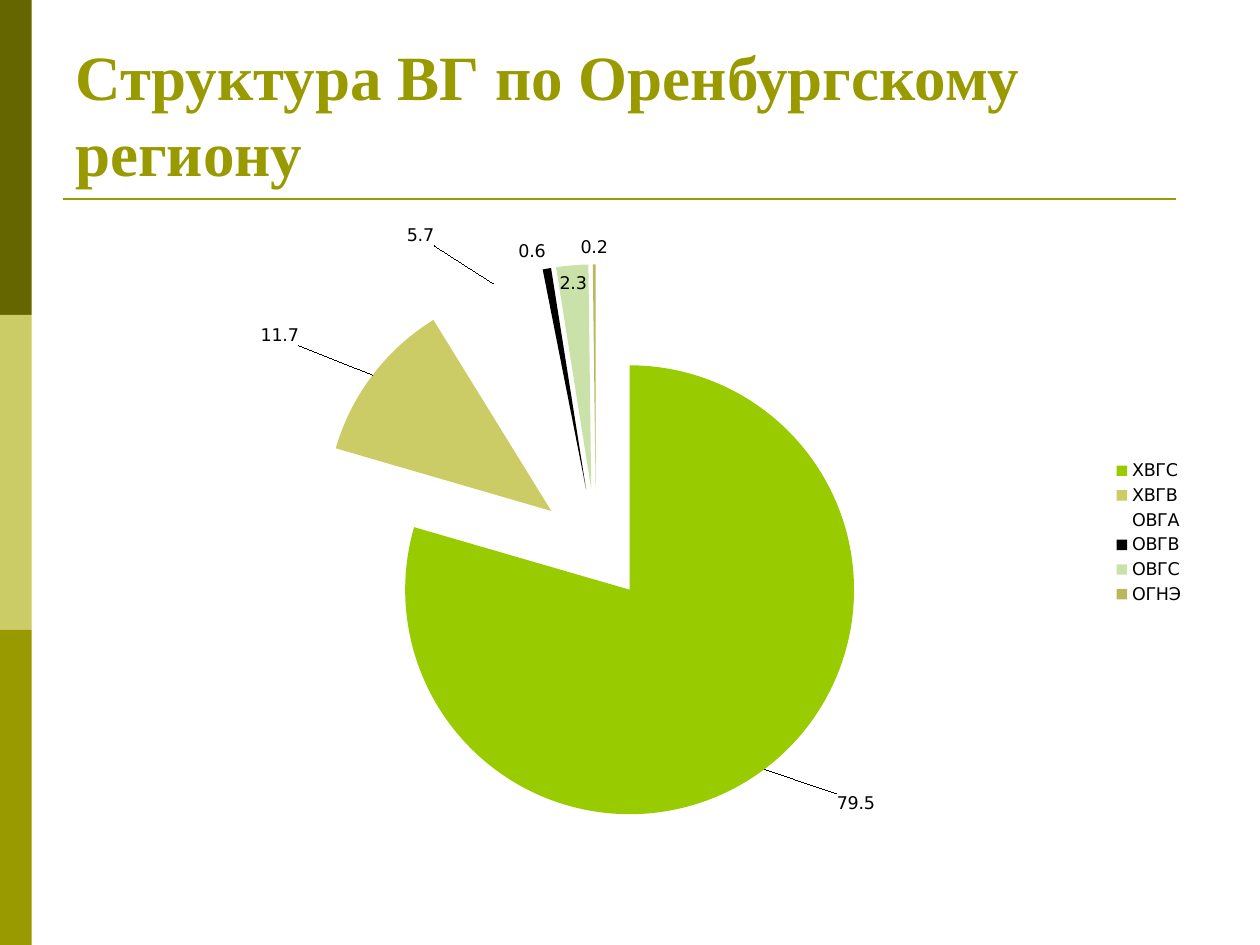
from lxml import etree
from pptx import Presentation
from pptx.chart.data import CategoryChartData
from pptx.dml.color import RGBColor
from pptx.enum.chart import XL_CHART_TYPE, XL_LABEL_POSITION, XL_LEGEND_POSITION
from pptx.enum.shapes import MSO_CONNECTOR, MSO_SHAPE
from pptx.enum.text import MSO_ANCHOR
from pptx.oxml import parse_xml
from pptx.oxml.ns import nsdecls, qn
from pptx.util import Cm, Pt

PIE = XL_CHART_TYPE.PIE
BEST_FIT = XL_LABEL_POSITION.BEST_FIT
RIGHT = XL_LEGEND_POSITION.RIGHT
RECT = MSO_SHAPE.RECTANGLE
STRAIGHT = MSO_CONNECTOR.STRAIGHT
BOTTOM = MSO_ANCHOR.BOTTOM

COLORS = {"dark": "666600", "light": "CCCC66", "olive": "999900", "text": "000000"}
SLICES = [
    ("ХВГС", 79.5, "99CC00"),
    ("ХВГВ", 11.7, "CCCC66"),
    ("ОВГА", 5.7, "FFFFFF"),
    ("ОВГВ", 0.6, "000000"),
    ("ОВГС", 2.3, "CAE2AA"),
    ("ОГНЭ", 0.2, "B9B95C"),
]
# Label shifts as fractions of the chart size
LABEL_SHIFTS = [(0.06, 0.03), (-0.06, -0.04), (-0.05, -0.05)]


def rgb(value):
    return RGBColor.from_string(value)


def layout_xml(**values):
    items = "".join(f'<c:{k} val="{v}"/>' for k, v in values.items())
    return parse_xml(f'<c:layout {nsdecls("c")}><c:manualLayout>{items}'
                     "</c:manualLayout></c:layout>")


prs = Presentation()
prs.slide_width, prs.slide_height = Cm(25.4), Cm(19.05)
s = prs.slides.add_slide(prs.slide_layouts[6])

# Side band
for i, name in enumerate(("dark", "light", "olive")):
    sp = s.shapes.add_shape(RECT, 0, Cm(6.35 * i), Cm(0.64), Cm(6.35))
    sp.shadow.inherit = False
    sp.fill.solid()
    sp.fill.fore_color.rgb = rgb(COLORS[name])
    sp.line.fill.background()

# Rule under the title
line = s.shapes.add_connector(STRAIGHT, Cm(1.27), Cm(4.01), Cm(23.7), Cm(4.01))
line.line.color.rgb = rgb(COLORS["olive"])
line.line.width = Pt(1.5)
etree.SubElement(line._element.spPr, qn("a:effectLst"))

# Title
tf = s.shapes.add_textbox(Cm(1.27), Cm(0.76), Cm(22.86), Cm(3.18)).text_frame
tf.word_wrap = True
tf.vertical_anchor = BOTTOM
p = tf.paragraphs[0]
p.text = "Структура ВГ по Оренбургскому региону"
p.font.name = "Times New Roman"
p.font.size = Pt(36)
p.font.bold = True
p.font.color.rgb = rgb(COLORS["olive"])

# Pie chart
data = CategoryChartData()
data.categories = [name for name, _, _ in SLICES]
data.add_series("Series 1", [value for _, value, _ in SLICES])
chart = s.shapes.add_chart(PIE, Cm(1.27), Cm(4.45), Cm(22.86), Cm(12.57), data).chart
chart.has_title = False
chart.font.name = "DejaVu Sans"
chart.font.size = Pt(10)
chart.font.color.rgb = rgb(COLORS["text"])
chart.has_legend = True
chart.legend.position = RIGHT
chart.legend.include_in_layout = False

plot_area = chart._chartSpace.chart.plotArea
for old in plot_area.findall(qn("c:layout")):
    plot_area.remove(old)
plot_area.insert(0, layout_xml(layoutTarget="inner", xMode="edge", yMode="edge",
                               x=0.22, y=0.07, w=0.5, h=0.9))

# Slices, pulled apart equally
plot = chart.plots[0]
plot.vary_by_categories = True
series = plot.series[0]
for i, (_, _, color) in enumerate(SLICES):
    fill = series.points[i].format.fill
    fill.solid()
    fill.fore_color.rgb = rgb(color)
explosion = parse_xml(f'<c:explosion {nsdecls("c")} val="25"/>')
series._element.find(qn("c:dPt")).addprevious(explosion)

# Value labels
labels = series.data_labels
labels.show_value = True
labels.show_percentage = False
labels.number_format = "General"
labels.number_format_is_linked = False
labels.position = BEST_FIT
for i, (x, y) in enumerate(LABEL_SHIFTS):
    label = series.points[i].data_label
    label.position = BEST_FIT
    d_lbl = labels._element.findall(qn("c:dLbl"))[i]
    d_lbl.find(qn("c:idx")).addnext(layout_xml(x=x, y=y))
leader = labels._element.find(qn("c:showLeaderLines"))
if leader is None:
    leader = etree.SubElement(labels._element, qn("c:showLeaderLines"))
leader.set("val", "1")

prs.save("out.pptx")
